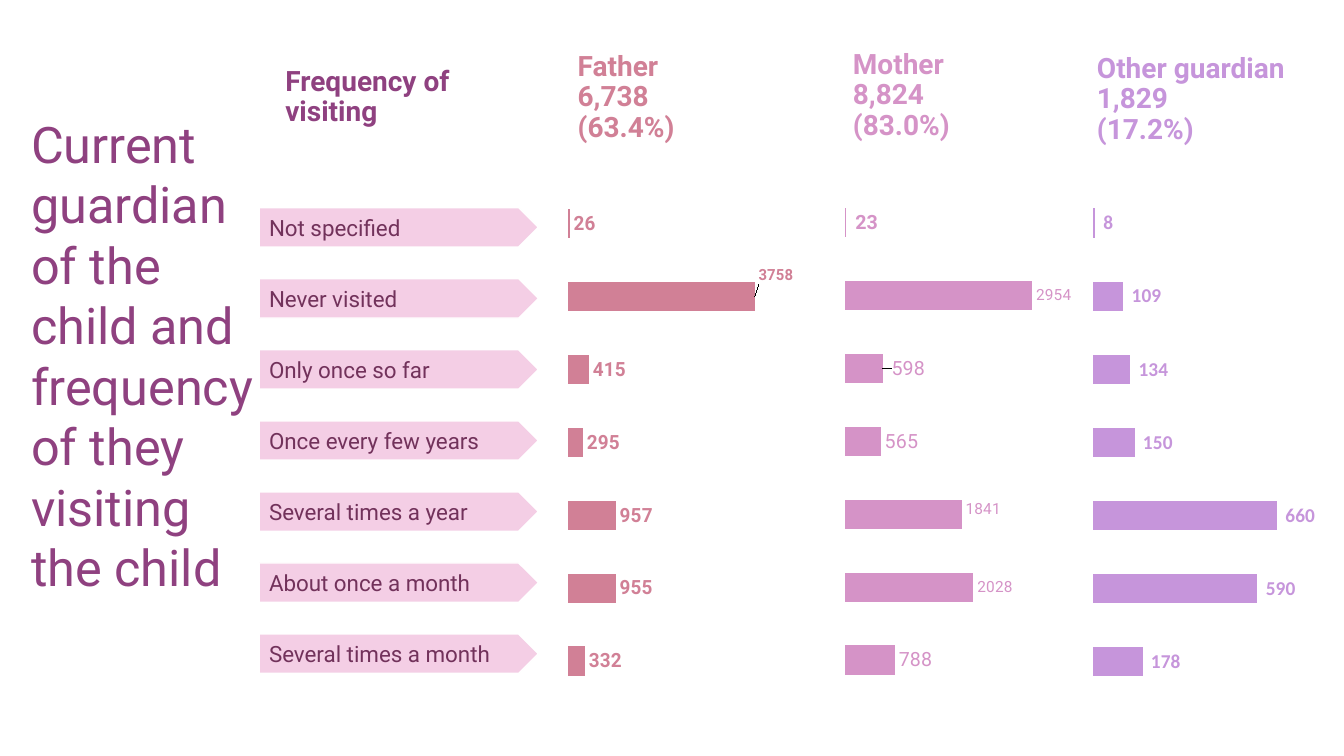
from dataclasses import dataclass, field

from lxml import etree
from pptx import Presentation
from pptx.chart.data import CategoryChartData
from pptx.dml.color import RGBColor
from pptx.enum.chart import XL_CHART_TYPE, XL_LABEL_POSITION
from pptx.enum.shapes import MSO_SHAPE
from pptx.enum.text import MSO_ANCHOR, MSO_AUTO_SIZE, PP_ALIGN
from pptx.oxml.ns import qn
from pptx.util import Inches, Pt

BAR_CLUSTERED = XL_CHART_TYPE.BAR_CLUSTERED
OUTSIDE_END = XL_LABEL_POSITION.OUTSIDE_END
PENTAGON = MSO_SHAPE.PENTAGON
TOP, MIDDLE = MSO_ANCHOR.TOP, MSO_ANCHOR.MIDDLE
FIT_SHAPE, NO_FIT = MSO_AUTO_SIZE.SHAPE_TO_FIT_TEXT, MSO_AUTO_SIZE.NONE
LEFT = PP_ALIGN.LEFT

COLORS = {
    "plum": "8F4180", "label": "72325B", "arrow": "F4CEE5", "white": "FFFFFF",
    "father": "D18096", "mother": "D593C7", "other": "C695DB", "black": "000000",
}
ROBOTO, CALIBRI = "Roboto", "Calibri"
GENERAL = "General"
ACCOUNTING = '_(* #,##0_);_(* \\(#,##0\\);_(* "-"??_);_(@_)'
TITLE = "Current guardian of the child and frequency of they visiting the child"
FREQUENCIES = [
    "Not specified", "Never visited", "Only once so far", "Once every few years",
    "Several times a year", "About once a month", "Several times a month",
]
FIRST_ROW, LAST_ROW = 2.06, 6.29
PLOT_MARGIN = 0.1


@dataclass(frozen=True)
class Area:
    left: float
    top: float
    width: float
    height: float

    def lengths(self) -> list:
        return [Inches(n) for n in (self.left, self.top, self.width, self.height)]


@dataclass(frozen=True)
class PointLabel:
    size: int
    bold: bool = False
    as_text: bool = True
    shift: tuple[float, float] = (0, 0)


@dataclass(frozen=True)
class Guardian:
    heading: list[str]
    heading_area: Area
    color: str
    chart_area: Area
    plot_left: float
    plot_width: float
    axis_maximum: int
    values: list[int]
    label_font: str = ROBOTO
    number_format: str = ACCOUNTING
    point_labels: dict[int, PointLabel] = field(default_factory=dict)


# Values run from the bottom row to the top row.
GUARDIANS = [
    Guardian(["Father", "6,738", "(63.4%)"], Area(5.67, 0.38, 2.16, 1.18), "father",
             Area(5.59, 1.76, 2.28, 5.26), 0.05, 2.04, 4000,
             [332, 955, 957, 295, 415, 3758, 26], number_format=GENERAL,
             point_labels={5: PointLabel(11, True, False, (0, -0.04))}),
    Guardian(["Mother", "8,824", "(83.0%)"], Area(8.4, 0.36, 2.16, 1.18), "mother",
             Area(8.34, 1.75, 2.36, 5.26), 0.04, 2.2, 3500,
             [788, 2028, 1841, 565, 598, 2954, 23],
             point_labels={0: PointLabel(14), 1: PointLabel(11), 2: PointLabel(11, shift=(0, -0.01)),
                           3: PointLabel(14), 4: PointLabel(14, shift=(0.02, 0)),
                           5: PointLabel(11)}),
    Guardian(["Other guardian", "1,829", "(17.2%)"], Area(10.82, 0.4, 2.16, 1.18), "other",
             Area(10.81, 1.75, 2.28, 5.28), 0.03, 1.97, 700,
             [178, 590, 660, 150, 134, 109, 8], label_font=CALIBRI),
]


def set_font(font, size: float, color: str, bold: bool = False, name: str = ROBOTO) -> None:
    for attribute, value in {"size": Pt(size), "bold": bold, "name": name}.items():
        setattr(font, attribute, value)
    font.color.rgb = RGBColor.from_string(COLORS[color])


def write_text(box, lines: list[str], size: float, color: str, bold: bool = False,
               spacing: float = 1, **frame_format) -> None:
    frame = box.text_frame
    for attribute, value in {"word_wrap": True, **frame_format}.items():
        setattr(frame, attribute, value)
    for index, line in enumerate(lines):
        para = frame.add_paragraph() if index else frame.paragraphs[0]
        para.alignment = LEFT
        para.line_spacing = spacing
        span = para.add_run()
        span.text = line
        set_font(span.font, size, color, bold)


def add_heading(page, lines: list[str], area: Area, color: str) -> None:
    box = page.shapes.add_textbox(*area.lengths())
    write_text(box, lines, 20, color, True, 0.9, auto_size=NO_FIT, vertical_anchor=MIDDLE,
               margin_left=Inches(0.06), margin_right=Inches(0.06))


def add_frequency(page, row: int, text: str) -> None:
    top = FIRST_ROW + row * (LAST_ROW - FIRST_ROW) / (len(FREQUENCIES) - 1)
    arrow = page.shapes.add_shape(PENTAGON, *Area(2.57, top, 2.77, 0.39).lengths())
    arrow.shadow.inherit = False
    arrow.fill.solid()
    arrow.fill.fore_color.rgb = RGBColor.from_string(COLORS["arrow"])
    arrow.line.color.rgb = RGBColor.from_string(COLORS["white"])
    arrow.line.width = Pt(1)
    write_text(arrow, [text], 16, "label", vertical_anchor=MIDDLE)


def make_layout(values: dict[str, object]):
    """Build a manual chart layout element."""
    layout = etree.Element(qn("c:layout"))
    manual = etree.SubElement(layout, qn("c:manualLayout"))
    for tag, value in values.items():
        etree.SubElement(manual, qn(f"c:{tag}")).set("val", str(value))
    return layout


def place_plot(chart, guardian: Guardian) -> None:
    area = guardian.chart_area
    plot_area = chart.element.xpath(".//c:plotArea")[0]
    for layout in plot_area.findall(qn("c:layout")):
        plot_area.remove(layout)
    plot_area.insert(0, make_layout({
        "layoutTarget": "inner", "xMode": "edge", "yMode": "edge",
        "x": guardian.plot_left / area.width, "y": PLOT_MARGIN / area.height,
        "w": guardian.plot_width / area.width, "h": 1 - 2 * PLOT_MARGIN / area.height}))


def format_point_label(chart, guardian: Guardian, index: int, style: PointLabel) -> None:
    label = chart.plots[0].series[0].points[index].data_label
    if style.as_text:
        span = label.text_frame.paragraphs[0].add_run()
        span.text = str(guardian.values[index])
        font = span.font
    else:
        font = label.font
    set_font(font, style.size, guardian.color, style.bold)
    label.position = OUTSIDE_END
    if any(style.shift):
        label_xml = chart.element.xpath(f'.//c:dLbl[c:idx/@val="{index}"]')[0]
        for layout in label_xml.findall(qn("c:layout")):
            label_xml.remove(layout)
        label_xml.insert(1, make_layout(dict(zip("xy", style.shift))))


def add_visits_chart(page, guardian: Guardian) -> None:
    visits = CategoryChartData()
    visits.categories = [str(number + 1) for number in range(len(guardian.values))]
    visits.add_series("Series 1", guardian.values)
    chart = page.shapes.add_chart(BAR_CLUSTERED, *guardian.chart_area.lengths(), visits).chart
    chart.has_legend = chart.has_title = False
    set_font(chart.font, 10, "black", name=CALIBRI)
    for axis in (chart.category_axis, chart.value_axis):
        axis.visible = axis.has_major_gridlines = False
    chart.value_axis.minimum_scale = 0
    chart.value_axis.maximum_scale = guardian.axis_maximum
    place_plot(chart, guardian)

    plot = chart.plots[0]
    plot.gap_width = 150
    plot.vary_by_categories = False
    series = plot.series[0]
    series.format.fill.solid()
    series.format.fill.fore_color.rgb = RGBColor.from_string(COLORS[guardian.color])
    label_format = {"show_value": True, "position": OUTSIDE_END,
                    "number_format": guardian.number_format, "number_format_is_linked": False}
    for attribute, value in label_format.items():
        setattr(series.data_labels, attribute, value)
    set_font(series.data_labels.font, 14, guardian.color, True, guardian.label_font)
    for index, style in guardian.point_labels.items():
        format_point_label(chart, guardian, index, style)


def main() -> None:
    deck = Presentation()
    deck.slide_width, deck.slide_height = Inches(13.33), Inches(7.5)
    page = deck.slides.add_slide(deck.slide_layouts[6])
    for guardian in GUARDIANS:
        add_visits_chart(page, guardian)
        add_heading(page, guardian.heading, guardian.heading_area, guardian.color)
    for row, text in enumerate(FREQUENCIES):
        add_frequency(page, row, text)
    add_heading(page, ["Frequency of visiting"], Area(2.77, 0.35, 2.51, 1.24), "plum")
    title = page.shapes.add_textbox(*Area(0.21, 1.07, 2.51, 4.95).lengths())
    write_text(title, [TITLE], 36, "plum", auto_size=FIT_SHAPE, vertical_anchor=TOP)
    deck.save("out.pptx")


if __name__ == "__main__":
    main()
